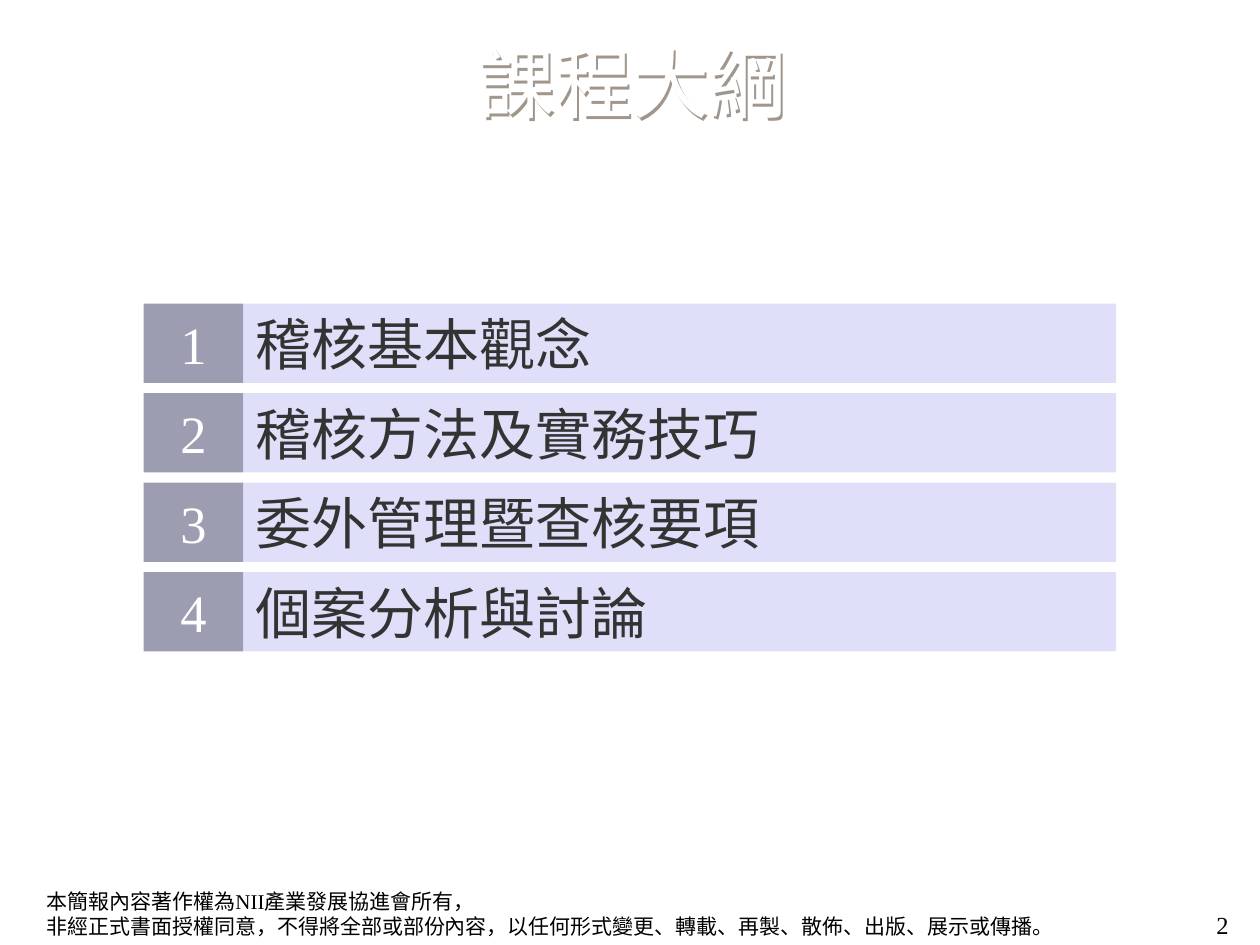
from dataclasses import dataclass

from lxml.etree import SubElement
from pptx import Presentation
from pptx.dml.color import RGBColor
from pptx.enum.shapes import MSO_SHAPE as Shape
from pptx.enum.text import MSO_ANCHOR as Anchor, PP_ALIGN as Align
from pptx.oxml.ns import qn
from pptx.util import Inches, Pt

FONT = "Times New Roman"
COLORS = {
    "black": "000000",
    "white": "FFFFFF",
    "ink": "333333",
    "navy": "3C3C64",
    "lilac": "C1C1F7",
    "shade": "A0968C",
}
TOPICS = ["稽核基本觀念", "稽核方法及實務技巧", "委外管理暨查核要項", "個案分析與討論"]
NOTICE = (
    "本簡報內容著作權為NII產業發展協進會所有，\v"
    "非經正式書面授權同意，不得將全部或部份內容，"
    "以任何形式變更、轉載、再製、散佈、出版、展示或傳播。"
)
TOP, STEP, HIGH = 2.41, 0.71, 0.63


@dataclass
class Style:
    size: int
    color: str
    align: Align = Align.LEFT


@dataclass
class Cell:
    left: float
    width: float
    fill: str
    style: Style


NUMBER = Cell(1.14, 0.79, "navy", Style(30, "white", Align.CENTER))
TOPIC = Cell(1.93, 6.93, "lilac", Style(32, "ink"))


def write(frame, text: str, style: Style) -> None:
    frame.word_wrap = True
    para = frame.paragraphs[0]
    para.text = text
    para.alignment = style.align
    font = para.font
    font.name = FONT
    font.size = Pt(style.size)
    font.color.rgb = RGBColor.from_string(COLORS[style.color])


def add_cell(group, cell: Cell, top: float, text: str) -> None:
    """Add a half-transparent box with text to a row."""
    box = group.shapes.add_shape(
        Shape.RECTANGLE, Inches(cell.left), Inches(top),
        Inches(cell.width), Inches(HIGH))
    box.shadow.inherit = False
    box.line.fill.background()
    box.fill.solid()
    box.fill.fore_color.rgb = RGBColor.from_string(COLORS[cell.fill])
    tint = box.fill._xPr.find(".//" + qn("a:srgbClr"))
    SubElement(tint, qn("a:alpha"), val="50000")
    box.text_frame.vertical_anchor = Anchor.MIDDLE
    write(box.text_frame, text, cell.style)


def add_title(slide, text: str) -> None:
    title = slide.shapes.title
    title.left, title.top = Inches(0.04), Inches(0.13)
    title.width, title.height = Inches(9.96), Inches(0.99)
    frame = title.text_frame
    frame.vertical_anchor = Anchor.MIDDLE
    frame.margin_bottom = 0
    write(frame, text, Style(44, "white", Align.CENTER))
    # The white letters show only through their shadow.
    effects = SubElement(title._element.spPr, qn("a:effectLst"))
    shadow = SubElement(effects, qn("a:outerShdw"),
                        dist=str(Inches(0.03)), dir="2700000")
    SubElement(shadow, qn("a:srgbClr"), val=COLORS["shade"])


def add_text(slide, left: float, top: float, width: float, height: float,
             text: str, style: Style) -> None:
    box = slide.shapes.add_textbox(
        Inches(left), Inches(top), Inches(width), Inches(height))
    write(box.text_frame, text, style)


def main() -> None:
    deck = Presentation()
    deck.slide_width, deck.slide_height = Inches(10), Inches(7.5)
    slide = deck.slides.add_slide(deck.slide_layouts[5])
    add_text(slide, 0.27, 7, 8.82, 0.5, NOTICE, Style(12, "black"))
    add_text(slide, 7.52, 7.17, 2.33, 0.52, "2",
             Style(14, "black", Align.RIGHT))
    add_title(slide, "課程大綱")
    for i, topic in enumerate(TOPICS):
        row = slide.shapes.add_group_shape()
        top = TOP + i * STEP
        add_cell(row, NUMBER, top, str(i + 1))
        add_cell(row, TOPIC, top, topic)
    deck.save("out.pptx")


if __name__ == "__main__":
    main()
